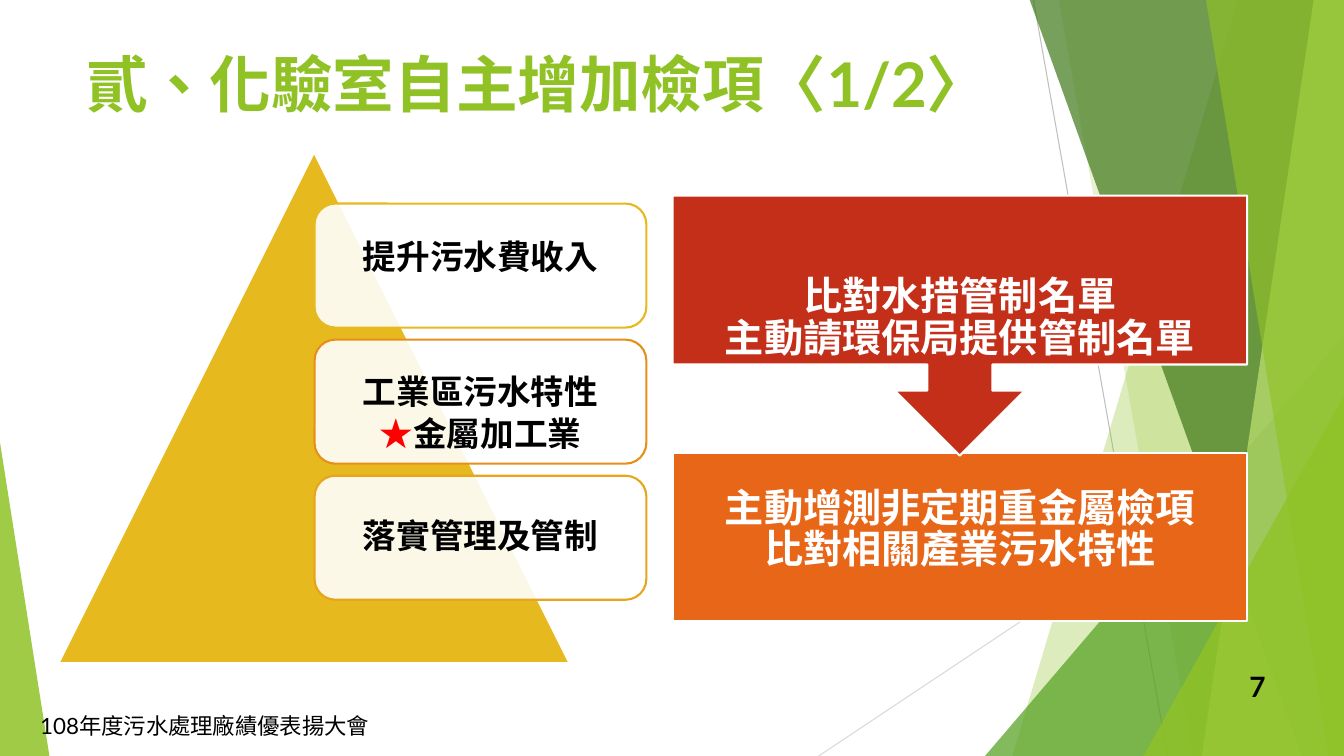
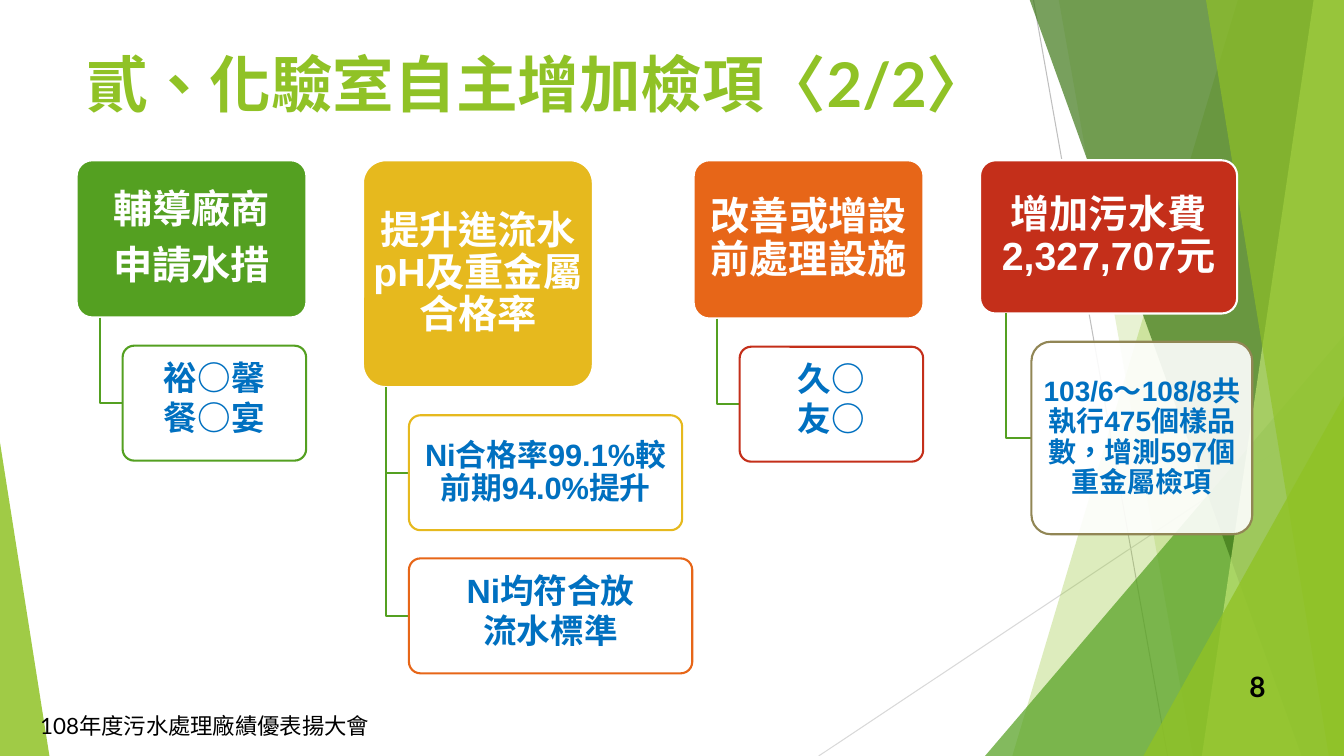
from itertools import groupby
from typing import NamedTuple

from lxml import etree
from pptx import Presentation
from pptx.dml.color import RGBColor
from pptx.enum.lang import MSO_LANGUAGE_ID
from pptx.enum.shapes import MSO_CONNECTOR, MSO_SHAPE
from pptx.enum.text import MSO_ANCHOR, PP_ALIGN
from pptx.oxml.ns import qn
from pptx.util import Inches, Pt

RECT = MSO_SHAPE.RECTANGLE
ROUND = MSO_SHAPE.ROUNDED_RECTANGLE
TRIANGLE = MSO_SHAPE.ISOSCELES_TRIANGLE
CALLOUT = MSO_SHAPE.DOWN_ARROW_CALLOUT
STRAIGHT = MSO_CONNECTOR.STRAIGHT
LEFT, CENTER, RIGHT = PP_ALIGN.LEFT, PP_ALIGN.CENTER, PP_ALIGN.RIGHT
MIDDLE, BOTTOM = MSO_ANCHOR.MIDDLE, MSO_ANCHOR.BOTTOM
ZH_TW = MSO_LANGUAGE_ID.TRADITIONAL_CHINESE

LIME, GREEN, GOLD = "90C226", "54A021", "E6B91E"
ORANGE, RED, OLIVE = "E76618", "C42F1A", "918655"
WHITE, BLACK, BLUE = "FFFFFF", "000000", "0070C0"
TITLE_FONT, BODY_FONT = "Lato", "Arial"
FOOTER = "108年度污水處理廠績優表揚大會"
W, H = 13.33, 7.5
GAP = 0.28


class Ray(NamedTuple):
    start: tuple[float, float]
    end: tuple[float, float]
    color: str


class Band(NamedTuple):
    top_x: float
    bottom_x: float
    color: str
    alpha: int


class Wedge(NamedTuple):
    x: float
    y: float
    w: float
    adj: float
    color: str
    alpha: int


class Card(NamedTuple):
    text: str
    line: str
    spacing: float | Pt
    anchor: MSO_ANCHOR


class Child(NamedTuple):
    text: str
    w: float
    h: float
    line: str
    size: int = 24
    spacing: float | Pt = Pt(20)


class Branch(NamedTuple):
    text: str
    x: float
    w: float
    h: float
    color: str
    children: tuple[Child, ...]


RAYS = (Ray((10.25, 0), (11.58, H), "BFBFBF"), Ray((W, 4.03), (8.12, H), "D9D9D9"))
BACKDROP = (
    Band(12.28, 10.04, LIME, 30),
    Band(10.5, 11.83, LIME, 20),
    Wedge(9.77, 3.33, 3.56, 1, GREEN, 72),
    Band(10.21, 12.91, "3F7819", 70),
    Band(13.03, 11.92, "C0E474", 70),
    Band(11.96, 13.18, LIME, 65),
    Wedge(11.34, 3.93, 1.99, 1, LIME, 80),
    Wedge(0, 4.39, 0.49, 0, LIME, 85),
)
CARDS = (
    Card("提升污水費收入", GOLD, Pt(15), MIDDLE),
    Card("工業區污水特性\n★金屬加工業", "E6901B", Pt(22), BOTTOM),
    Card("落實管理及管制", "E6A51D", 0.9, MIDDLE),
)
BRANCHES = (
    Branch("輔導廠商\n申請水措", 0.76, 2.28, 1.56, GREEN,
           (Child("裕○馨\n餐○宴", 1.82, 1.14, GREEN),)),
    Branch("提升進流水pH及重金屬合格率", 3.6, 2.28, 2.25, GOLD,
           (Child("Ni合格率99.1%較前期94.0%提升", 2.71, 1.14, GOLD, 22, 0.9),
            Child("Ni均符合放\n流水標準", 2.81, 1.14, ORANGE))),
    Branch("改善或增設前處理設施", 6.88, 2.28, 1.57, ORANGE,
           (Child("久○\n友○", 1.82, 1.14, RED),)),
    Branch("增加污水費2,327,707元", 9.72, 2.55, 1.52, RED,
           (Child("103/6～108/8共執行475個樣品數，增測597個重金屬檢項",
                  2.19, 1.91, OLIVE, 20, 0.9),)),
)


def rgb(color: str) -> RGBColor:
    return RGBColor.from_string(color)


def paint(sp, fill: str | None = None, alpha: int = 100, line: str | None = None) -> None:
    sp.shadow.inherit = False
    if fill:
        sp.fill.solid()
        sp.fill.fore_color.rgb = rgb(fill)
        if alpha < 100:
            clr = sp.fill._xPr.find(qn("a:solidFill"))[0]
            etree.SubElement(clr, qn("a:alpha")).set("val", str(alpha * 1000))
    else:
        sp.fill.background()
    if line:
        sp.line.color.rgb = rgb(line)
        sp.line.width = Pt(1.5)
    else:
        sp.line.fill.background()


def write(sp, text: str, *, size: int, color: str = BLACK, font: str = BODY_FONT,
          bold: bool = True, align: PP_ALIGN = CENTER, anchor: MSO_ANCHOR = MIDDLE,
          spacing: float | Pt = 1.0, after: float = 0.35,
          insets: tuple[float, float, float, float] = (0, 0, 0, 0),
          marks: dict[str, str] | None = None) -> None:
    tf = sp.text_frame
    tf.word_wrap = True
    tf.vertical_anchor = anchor
    tf.margin_left, tf.margin_top, tf.margin_right, tf.margin_bottom = map(Inches, insets)
    for i, row in enumerate(text.split("\n")):
        p = tf.add_paragraph() if i else tf.paragraphs[0]
        p.alignment = align
        p.line_spacing = spacing
        p.space_after = Pt(size * after)
        for run_color, chars in groupby(row, lambda c: (marks or {}).get(c, color)):
            r = p.add_run()
            r.text = "".join(chars)
            r.font.name, r.font.size, r.font.bold = font, Pt(size), bold
            r.font.color.rgb = rgb(run_color)
            r.font.language_id = ZH_TW


def add_box(s, kind: MSO_SHAPE, x: float, y: float, w: float, h: float, *,
            adj: float | None = None, **style):
    sp = s.shapes.add_shape(kind, Inches(x), Inches(y), Inches(w), Inches(h))
    if adj is not None:
        sp.adjustments[0] = adj
    paint(sp, **style)
    return sp


def add_path(s, points: list[tuple[float, float]], close: bool, **style) -> None:
    pts = [(Inches(x), Inches(y)) for x, y in points]
    builder = s.shapes.build_freeform(*pts[0])
    builder.add_line_segments(pts[1:], close=close)
    paint(builder.convert_to_shape(), **style)


def add_label(s, text: str, x: float, y: float, w: float, h: float, **fmt) -> None:
    sp = s.shapes.add_textbox(Inches(x), Inches(y), Inches(w), Inches(h))
    write(sp, text, font=TITLE_FONT, after=0, insets=(0.1, 0.05, 0.1, 0.05), **fmt)


def add_ray(s, ray: Ray) -> None:
    ends = [Inches(v) for v in (*ray.start, *ray.end)]
    cx = s.shapes.add_connector(STRAIGHT, *ends)
    cx.line.color.rgb = rgb(ray.color)
    cx.line.width = Pt(0.75)
    etree.SubElement(cx._element.spPr, qn("a:effectLst"))


def add_backdrop(s) -> None:
    for ray in RAYS:
        add_ray(s, ray)
    for part in BACKDROP:
        if isinstance(part, Band):
            corners = [(part.top_x, -0.01), (W, -0.01), (W, H), (part.bottom_x, H)]
            add_path(s, corners, True, fill=part.color, alpha=part.alpha)
        else:
            add_box(s, TRIANGLE, part.x, part.y, part.w, H - part.y,
                    adj=part.adj, fill=part.color, alpha=part.alpha)


def new_slide(prs, title: str, number: int):
    s = prs.slides.add_slide(prs.slide_layouts[6])
    add_backdrop(s)
    add_label(s, title, 0.76, 0.36, 9.4, 0.93, size=44, color=LIME, align=LEFT)
    add_label(s, str(number), 11.9, 6.61, 0.75, 0.4, size=20, align=RIGHT)
    add_label(s, FOOTER, 0.3, 7, 6.89, 0.4, size=16, bold=False, align=LEFT)
    return s


def add_pyramid(s) -> None:
    add_box(s, TRIANGLE, 0.58, 1.51, 5.07, 5.07, fill=GOLD, line=WHITE)
    for i, card in enumerate(CARDS):
        sp = add_box(s, ROUND, 3.12, 2.02 + 1.35 * i, 3.29, 1.23,
                     fill=WHITE, alpha=90, line=card.line)
        write(sp, card.text, size=24, spacing=card.spacing, anchor=card.anchor,
              insets=(0.04, 0.04, 0.04, 0.04), marks={"★": "FF0000"})


def add_steps(s) -> None:
    fmt = dict(size=28, color=WHITE, font=TITLE_FONT, spacing=Pt(20))
    result = add_box(s, RECT, 6.67, 4.49, 5.7, 1.67, fill=ORANGE, line=WHITE)
    write(result, "主動增測非定期重金屬檢項\n比對相關產業污水特性",
          insets=(0.22, 0.22, 0.22, 0.22), **fmt)
    source = add_box(s, CALLOUT, 6.67, 1.94, 5.7, 2.58, fill=RED, line=WHITE)
    write(source, "比對水措管制名單\n主動請環保局提供管制名單",
          insets=(0.22, 0.9, 0.22, 0), **fmt)


def add_branch(s, branch: Branch) -> None:
    top = 1.59
    bottom = top + branch.h
    stem_x, child_x = branch.x + 0.1 * branch.w, branch.x + 0.2 * branch.w
    head = add_box(s, ROUND, branch.x, top, branch.w, branch.h,
                   adj=0.1, fill=branch.color, line=WHITE)
    write(head, branch.text, size=28, color=WHITE, spacing=0.9)
    y = bottom + GAP
    for child in branch.children:
        mid = y + child.h / 2
        add_path(s, [(stem_x, bottom), (stem_x, mid), (child_x, mid)], False, line=GREEN)
        sp = add_box(s, ROUND, child_x, y, child.w, child.h,
                     adj=0.1, fill=WHITE, alpha=90, line=child.line)
        write(sp, child.text, size=child.size, color=BLUE, spacing=child.spacing)
        y += child.h + GAP


def main() -> None:
    prs = Presentation()
    prs.slide_width, prs.slide_height = Inches(W), Inches(H)
    s = new_slide(prs, "貳、化驗室自主增加檢項〈1/2〉", 7)
    add_pyramid(s)
    add_steps(s)
    s = new_slide(prs, "貳、化驗室自主增加檢項〈2/2〉", 8)
    for branch in BRANCHES:
        add_branch(s, branch)
    prs.save("out.pptx")


if __name__ == "__main__":
    main()
